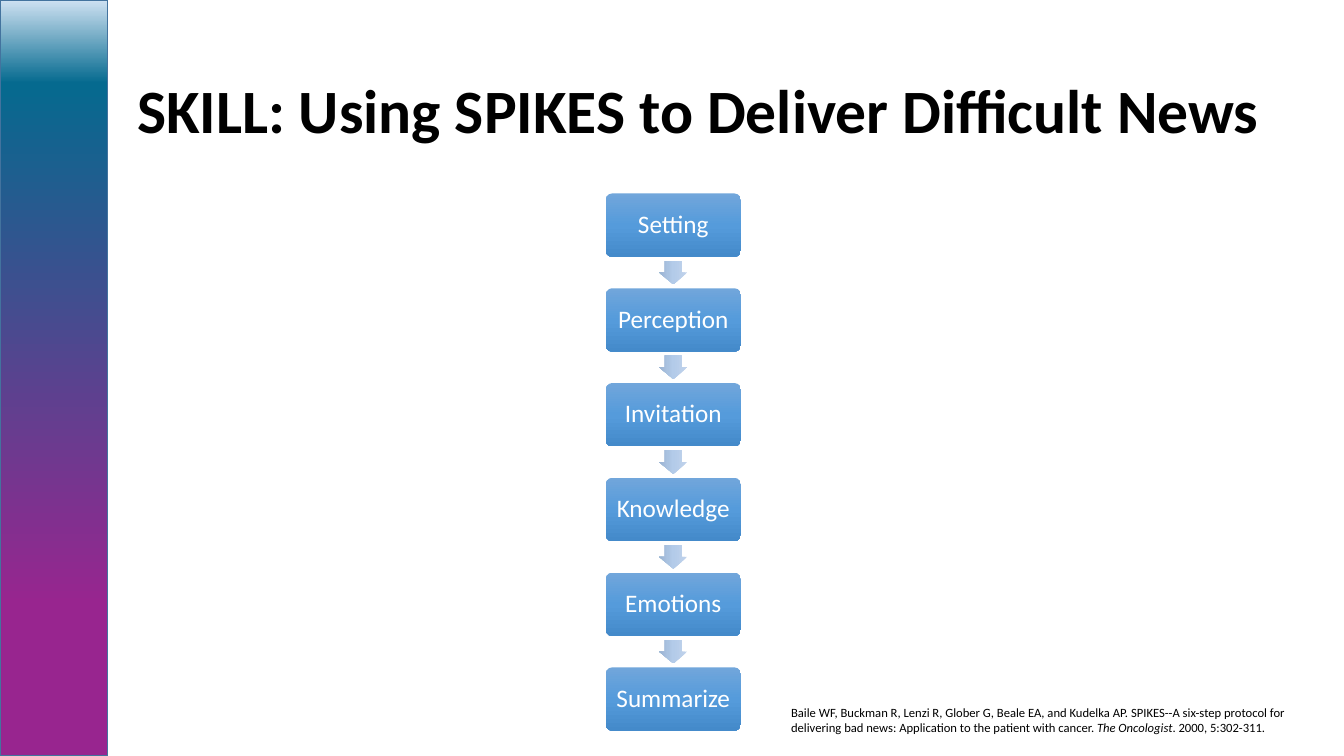
from lxml.etree import SubElement
from pptx import Presentation
from pptx.dml.color import RGBColor
from pptx.enum.shapes import MSO_SHAPE
from pptx.enum.text import MSO_ANCHOR, MSO_AUTO_SIZE, PP_ALIGN
from pptx.oxml.ns import qn
from pptx.util import Pt

COLORS = {
    "text": "000000",
    "step_text": "FFFFFF",
    "bar_line": "43739E",
}
GRADIENTS = {
    "bar": [(20, "98258F"), (89, "056A8F"), (100, "CEE1F2")],
    "step": [(0, "71A6DB"), (50, "559BDB"), (100, "448ACA")],
    "arrow": [(0, "C0D2EB"), (50, "B3CBE9"), (100, "9BB4D3")],
}
STEPS = ["Setting", "Perception", "Invitation", "Knowledge", "Emotions", "Summarize"]
STEP_LEFT, STEP_TOP, STEP_W, STEP_H = 432.7, 138.2, 96.5, 45.2
STEP_PITCH = 67.7
ARROW_W, ARROW_H = 17, 20.2


class SlideBuilder:
    font = "Calibri"

    def __init__(self, prs):
        self.s = prs.slides.add_slide(prs.slide_layouts[5])

    def add_run(self, p, text, size, color="text", bold=False, italic=False):
        r = p.add_run()
        r.text = text
        r.font.name = self.font
        r.font.size = Pt(size)
        r.font.bold = bold
        r.font.italic = italic
        r.font.color.rgb = RGBColor.from_string(COLORS[color])

    def title(self, text, left, top, width, height):
        sp = self.s.shapes.title
        sp.left, sp.top, sp.width, sp.height = Pt(left), Pt(top), Pt(width), Pt(height)
        tf = sp.text_frame
        tf.word_wrap = True
        tf.auto_size = MSO_AUTO_SIZE.NONE
        tf.vertical_anchor = MSO_ANCHOR.MIDDLE
        p = tf.paragraphs[0]
        p.alignment = PP_ALIGN.LEFT
        p.line_spacing = 0.9
        self.add_run(p, text, 44, bold=True)

    def shape(self, kind, gradient, left, top, width, height, angle=270, line=None):
        sp = self.s.shapes.add_shape(kind, Pt(left), Pt(top), Pt(width), Pt(height))
        sp.shadow.inherit = False
        sp.fill.gradient()
        sp.fill.gradient_angle = angle
        stops = next(sp._element.iter(qn("a:gsLst")))
        for gs in list(stops):
            stops.remove(gs)
        for pos, color in GRADIENTS[gradient]:
            gs = SubElement(stops, qn("a:gs"), pos=str(pos * 1000))
            SubElement(gs, qn("a:srgbClr"), val=color)
        if line:
            sp.line.color.rgb = RGBColor.from_string(COLORS[line])
            sp.line.width = Pt(1)
        else:
            sp.line.fill.background()
        return sp

    def step(self, text, top):
        sp = self.shape(MSO_SHAPE.ROUNDED_RECTANGLE, "step", STEP_LEFT, top, STEP_W, STEP_H)
        sp.adjustments[0] = 0.1
        tf = sp.text_frame
        tf.word_wrap = True
        tf.vertical_anchor = MSO_ANCHOR.MIDDLE
        tf.margin_left = tf.margin_right = tf.margin_top = tf.margin_bottom = Pt(5)
        p = tf.paragraphs[0]
        p.alignment = PP_ALIGN.CENTER
        p.line_spacing = 0.9
        self.add_run(p, text, 18, "step_text")

    def arrow(self, middle):
        left = STEP_LEFT + (STEP_W - ARROW_W) / 2
        sp = self.shape(MSO_SHAPE.RIGHT_ARROW, "arrow", left, middle - ARROW_H / 2, ARROW_W, ARROW_H)
        sp.adjustments[0] = 0.6
        sp.adjustments[1] = 0.5
        sp.rotation = 90

    def citation(self, runs, left, top, width, height):
        sp = self.s.shapes.add_textbox(Pt(left), Pt(top), Pt(width), Pt(height))
        tf = sp.text_frame
        tf.word_wrap = True
        tf.auto_size = MSO_AUTO_SIZE.SHAPE_TO_FIT_TEXT
        p = tf.paragraphs[0]
        for text, italic in runs:
            self.add_run(p, text, 9, italic=italic)


def main():
    prs = Presentation()
    prs.slide_width, prs.slide_height = Pt(960), Pt(540)
    slide = SlideBuilder(prs)
    slide.shape(MSO_SHAPE.RECTANGLE, "bar", 0, 0, 77, 540, angle=90, line="bar_line")
    slide.title("SKILL: Using SPIKES to Deliver Difficult News", 90.7, 28.8, 838, 104.4)
    for i, text in enumerate(STEPS):
        top = STEP_TOP + i * STEP_PITCH
        slide.step(text, top)
        if i < len(STEPS) - 1:
            slide.arrow(top + (STEP_H + STEP_PITCH) / 2)
    slide.citation([
        ("Baile WF, Buckman R, Lenzi R, Glober G, Beale EA, and Kudelka AP. SPIKES--A six-step "
         "protocol for delivering bad news: Application to the patient with cancer. ", False),
        ("The Oncologist", True),
        (". 2000, 5:302-311.", False),
    ], 558, 499.7, 402, 40.3)
    prs.save("out.pptx")


if __name__ == "__main__":
    main()
